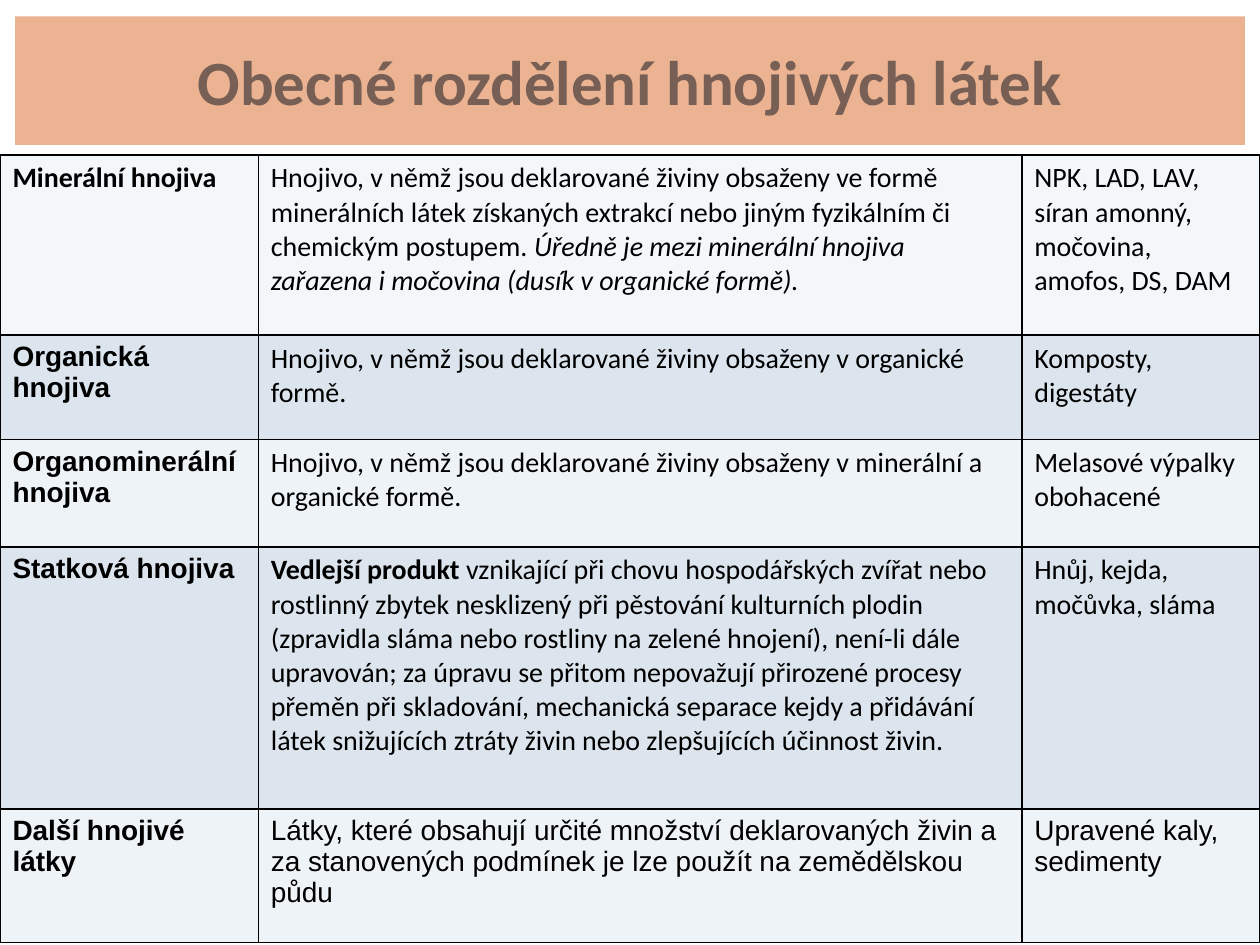
from lxml import etree
from pptx import Presentation
from pptx import util as u
from pptx.dml.color import RGBColor
from pptx.enum import text
from pptx.oxml.ns import qn

COLORS = {
    "title_fill": "EBB391", "title_text": "775F55", "text": "000000", "border": "000000",
    "top": "F4F7FA", "dark": "DCE5EE", "light": "EEF3F7",
}
COLUMNS = [2.05, 6.06, 1.89]
PLAIN, BOLD, ITALIC = "plain", "bold", "italic"

# Row height, fill, font of each column, then the cells as lists of (text, style)
ROWS = [
    (1.43, "top", ["Calibri"] * 3, [
        [("Minerální hnojiva", BOLD)],
        [("Hnojivo, v němž jsou deklarované živiny obsaženy ve formě minerálních látek "
          "získaných extrakcí nebo jiným fyzikálním či chemickým postupem. ", PLAIN),
         ("Úředně je mezi minerální hnojiva zařazena i močovina "
          "(dusík v organické formě).", ITALIC)],
        [("NPK, LAD, LAV, síran amonný, močovina, amofos, DS, DAM", PLAIN)]]),
    (0.83, "dark", ["Arial", "Calibri", "Calibri"], [
        [("Organická hnojiva", BOLD)],
        [("Hnojivo, v němž jsou deklarované živiny obsaženy v organické formě.", PLAIN)],
        [("Komposty, digestáty", PLAIN)]]),
    (0.85, "light", ["Arial", "Calibri", "Calibri"], [
        [("Organominerální hnojiva", BOLD)],
        [("Hnojivo, v němž jsou deklarované živiny obsaženy v minerální a organické formě.",
          PLAIN)],
        [("Melasové výpalky obohacené", PLAIN)]]),
    (2.08, "dark", ["Arial", "Calibri", "Calibri"], [
        [("Statková hnojiva", BOLD)],
        [("Vedlejší produkt ", BOLD),
         ("vznikající při chovu hospodářských zvířat nebo rostlinný zbytek nesklizený při "
          "pěstování kulturních plodin (zpravidla sláma nebo rostliny na zelené hnojení), "
          "není-li dále upravován; za úpravu se přitom nepovažují přirozené procesy přeměn "
          "při skladování, mechanická separace kejdy a přidávání látek snižujících ztráty "
          "živin nebo zlepšujících účinnost živin.", PLAIN)],
        [("Hnůj, kejda, močůvka, sláma", PLAIN)]]),
    (1.06, "light", ["Arial"] * 3, [
        [("Další hnojivé látky", BOLD)],
        [("Látky, které obsahují určité množství deklarovaných živin a za stanovených "
          "podmínek je lze použít na zemědělskou půdu", PLAIN)],
        [("Upravené kaly, sedimenty", PLAIN)]]),
]


class SlideBuilder:
    def __init__(self, prs):
        self.prs = prs
        self.s = prs.slides.add_slide(prs.slide_layouts[5])

    def box(self, x, y, w, h):
        """Turn shares of the slide's size into lengths."""
        width, height = self.prs.slide_width, self.prs.slide_height
        return int(x * width), int(y * height), int(w * width), int(h * height)

    def fill(self, target, color):
        target.fill.solid()
        target.fill.fore_color.rgb = RGBColor.from_string(COLORS[color])

    def font(self, p, name, size, color):
        p.font.name, p.font.size = name, u.Pt(size)
        p.font.color.rgb = RGBColor.from_string(COLORS[color])

    def title(self, words, *share):
        sp = self.s.shapes.title
        sp.left, sp.top, sp.width, sp.height = self.box(*share)
        self.fill(sp, "title_fill")
        tf = sp.text_frame
        tf.text = words
        tf.vertical_anchor = text.MSO_ANCHOR.MIDDLE
        p = tf.paragraphs[0]
        p.alignment = text.PP_ALIGN.CENTER
        self.font(p, "Calibri", 36, "title_text")
        p.font.bold = True

    def borders(self, cell):
        """Draw a thin line on all four sides; lines must precede the cell's fill."""
        tcPr = cell._tc.get_or_add_tcPr()
        for i, side in enumerate(("a:lnL", "a:lnR", "a:lnT", "a:lnB")):
            ln = etree.Element(qn(side), w=str(u.Pt(1)))
            solid = etree.SubElement(ln, qn("a:solidFill"))
            etree.SubElement(solid, qn("a:srgbClr"), val=COLORS["border"])
            tcPr.insert(i, ln)

    def cell(self, cell, runs, font, color):
        self.fill(cell, color)
        self.borders(cell)
        p = cell.text_frame.paragraphs[0]
        self.font(p, font, 16, "text")
        for words, style in runs:
            r = p.add_run()
            r.text = words
            r.font.bold = style == BOLD
            r.font.italic = style == ITALIC

    def table(self, columns, rows, *share):
        table = self.s.shapes.add_table(len(rows), len(columns), *self.box(*share)).table
        table.first_row = table.horz_banding = False
        for column, width in zip(table.columns, columns):
            column.width = u.Inches(width)
        for row, (height, color, fonts, cells) in zip(table.rows, rows):
            row.height = u.Inches(height)
            for cell, runs, font in zip(row.cells, cells, fonts):
                self.cell(cell, runs, font, color)


def main():
    prs = Presentation()
    prs.slide_width, prs.slide_height = u.Inches(10), u.Inches(7.5)
    slide = SlideBuilder(prs)
    slide.title("Obecné rozdělení hnojivých látek", 0.012, 0.13 / 7.5, 0.976, 1.02 / 7.5)
    slide.table(COLUMNS, ROWS, 0, 1.23 / 7.5, 1, 6.25 / 7.5)
    prs.save("out.pptx")


if __name__ == "__main__":
    main()
